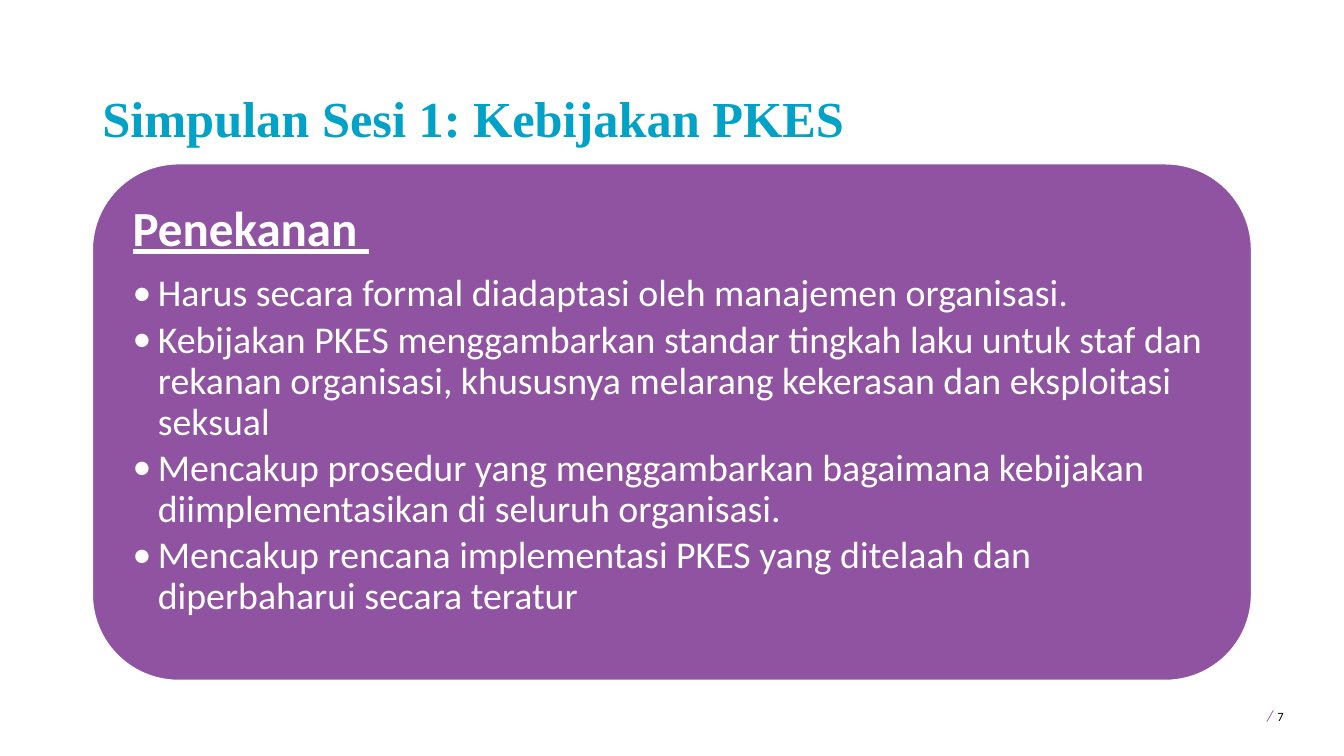
from lxml import etree
from pptx import Presentation
from pptx import util as u
from pptx.dml.color import RGBColor
from pptx.enum import shapes, text
from pptx.oxml import ns

PURPLE = RGBColor(0x90, 0x53, 0xA1)
TEAL = RGBColor(0x00, 0xA2, 0xC7)
WHITE = RGBColor(0xFF, 0xFF, 0xFF)
BLACK = RGBColor(0x00, 0x00, 0x00)

TITLE = {"name": "Times New Roman", "size": u.Pt(36), "bold": True}
HEADING = {"name": "Calibri", "size": u.Pt(35), "bold": True, "underline": True}
BODY = {"name": "Calibri", "size": u.Pt(27)}
SPACER = {"name": "Calibri", "size": u.Pt(13.5)}
SLASH = {"name": "Calibri", "size": u.Pt(11.2), "italic": True}
NUMBER = {"name": "Calibri", "size": u.Pt(9)}

POINTS = [
    "Harus secara formal diadaptasi oleh manajemen organisasi.",
    "Kebijakan PKES menggambarkan standar tingkah laku untuk staf dan "
    "rekanan organisasi, khususnya melarang kekerasan dan eksploitasi seksual",
    "Mencakup prosedur yang menggambarkan bagaimana kebijakan "
    "diimplementasikan di seluruh organisasi.",
    "Mencakup rencana implementasi PKES yang ditelaah dan "
    "diperbaharui secara teratur",
]


def set_all(target, values):
    for name, value in values.items():
        setattr(target, name, value)


def add_text_box(page, left, top, width, height, anchor, side=7.2, edge=3.6):
    box = page.shapes.add_textbox(*map(u.Pt, (left, top, width, height)))
    frame = box.text_frame
    set_all(frame, {
        "word_wrap": True, "vertical_anchor": anchor,
        "margin_left": u.Pt(side), "margin_right": u.Pt(side),
        "margin_top": u.Pt(edge), "margin_bottom": u.Pt(edge),
    })
    return frame


def add_span(para, words, style, color):
    span = para.add_run()
    span.text = words
    set_all(span.font, style)
    span.font.color.rgb = color


def add_bullet(para, indent):
    props = para._p.get_or_add_pPr()
    props.set("marL", str(u.Pt(indent)))
    props.set("indent", str(-u.Pt(indent)))
    etree.SubElement(props, ns.qn("a:buFont"), typeface="Calibri")
    etree.SubElement(props, ns.qn("a:buChar"), char="•")


def add_panel(page, left, top, width, height):
    panel = page.shapes.add_shape(
        shapes.MSO_SHAPE.ROUNDED_RECTANGLE,
        *map(u.Pt, (left, top, width, height)))
    panel.shadow.inherit = False
    panel.fill.solid()
    panel.fill.fore_color.rgb = PURPLE
    panel.line.color.rgb = WHITE
    panel.line.width = u.Pt(1)


def add_points(frame, heading, points):
    para = frame.paragraphs[0]
    set_all(para, {"line_spacing": 0.9, "space_after": u.Pt(12.25)})
    add_span(para, heading, HEADING, WHITE)
    for point in points:
        para = frame.add_paragraph()
        set_all(para, {"level": 1, "line_spacing": 0.9, "space_after": u.Pt(4)})
        add_bullet(para, 18)
        add_span(para, point, BODY, WHITE)


def main():
    deck = Presentation()
    deck.slide_width, deck.slide_height = u.Pt(960), u.Pt(540)
    page = deck.slides.add_slide(deck.slide_layouts[6])

    # Slide number
    frame = add_text_box(page, 895, 495.4, 62.6, 28.8, text.MSO_ANCHOR.MIDDLE)
    para = frame.paragraphs[0]
    add_span(para, " ", SPACER, BLACK)
    add_span(para, "/", SLASH, PURPLE)
    add_span(para, " ", SPACER, BLACK)
    add_span(para, "7", NUMBER, BLACK)

    # Panel with the key points
    add_panel(page, 66, 117, 828, 369)
    frame = add_text_box(page, 84, 135, 792, 333, text.MSO_ANCHOR.TOP, 10.8, 10.8)
    add_points(frame, "Penekanan ", POINTS)

    # Title
    frame = add_text_box(page, 66, 28.8, 828, 81, text.MSO_ANCHOR.BOTTOM)
    para = frame.paragraphs[0]
    para.line_spacing = 0.9
    add_span(para, "Simpulan Sesi 1: Kebijakan PKES", TITLE, TEAL)

    deck.save("out.pptx")


if __name__ == "__main__":
    main()
